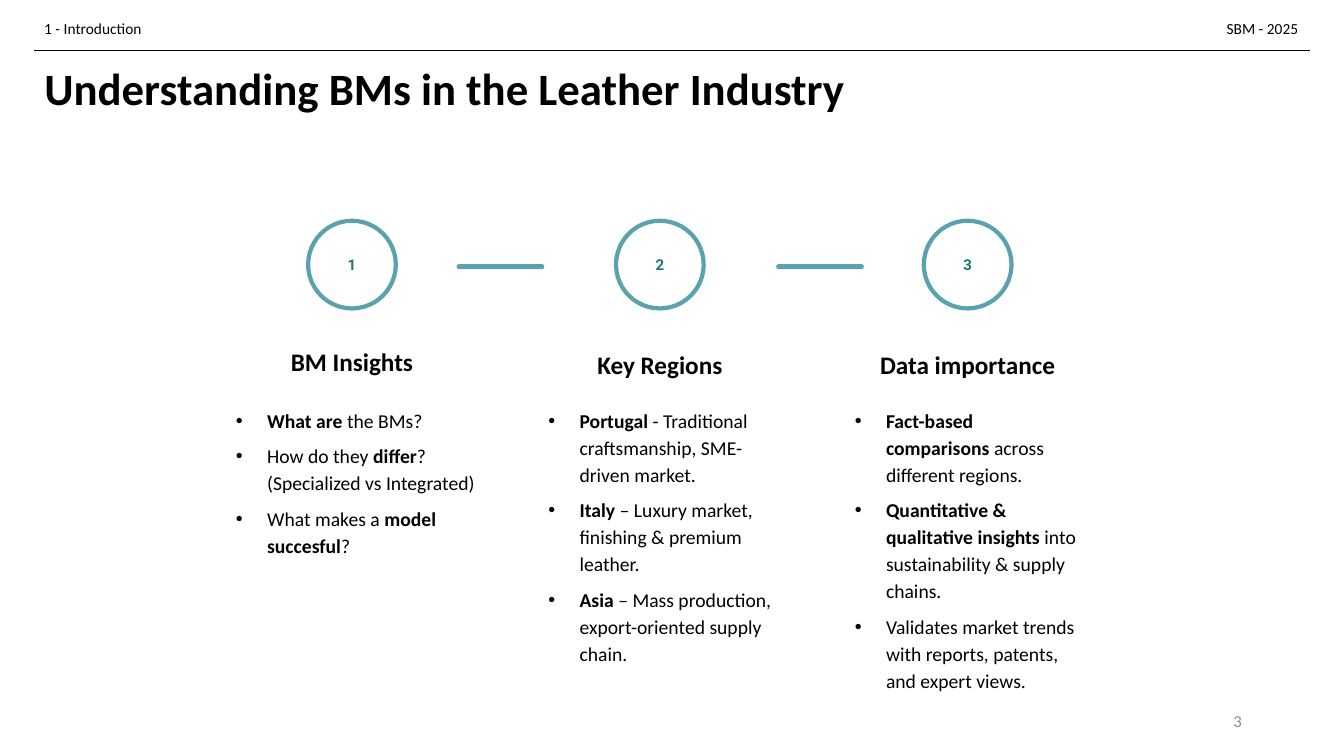
from lxml.etree import SubElement
from pptx import Presentation
from pptx.dml.color import RGBColor
from pptx.enum.shapes import MSO_CONNECTOR as Connector, MSO_SHAPE as Shape
from pptx.enum.text import MSO_ANCHOR as Anchor, MSO_AUTO_SIZE as AutoSize, PP_ALIGN as Align
from pptx.oxml.ns import qn
from pptx.util import Inches, Pt

COLORS = {"ink": "000000", "teal": "5AA2AE", "number": "1B786F", "muted": "8C8C8C"}
WIDTH, HEIGHT = Inches(13.33), Inches(7.5)
COLUMNS, ROWS = 160, 90
MARGIN = 4.08
FIRST_CENTER, STEP_PITCH = 41.9, 36.65
CIRCLE = 10.44
FIRST_BAR, BAR_PITCH = 54.36, 38.04

STEPS = [
    ("BM Insights", 38.64, 26.52, 31.92, [
        "**What are **the BMs?",
        "How do they **differ**? (Specialized vs Integrated)",
        "What makes a **model succesful**?",
    ]),
    ("Key Regions", 39, 63.72, 29.88, [
        "**Portugal** - Traditional craftsmanship, SME-driven market.",
        "**Italy** – Luxury market, finishing & premium leather.",
        "**Asia** – Mass production, export-oriented supply chain.",
    ]),
    ("Data importance", 39, 100.2, 29.88, [
        "**Fact-based comparisons **across different regions.",
        "**Quantitative & qualitative insights **into sustainability & supply chains.",
        "Validates market trends with reports, patents, and expert views.",
    ]),
]


def color(name):
    return RGBColor.from_string(COLORS[name])


def across(columns):
    return round(WIDTH * columns / COLUMNS)


def down(rows):
    return round(HEIGHT * rows / ROWS)


def area(left, top, width, height):
    return across(left), down(top), across(width), down(height)


def move(box, left, top, width, height):
    box.left, box.top, box.width, box.height = area(left, top, width, height)


def add_bullet(para):
    properties = para._p.get_or_add_pPr()
    properties.set("marL", str(Inches(0.31)))
    properties.set("indent", str(-Inches(0.31)))
    SubElement(properties, qn("a:buFont")).set("typeface", "Arial")
    SubElement(properties, qn("a:buChar")).set("char", "•")


def write(box, lines, size=14, font="Calibri", ink="ink", bold=False, align=Align.LEFT,
          anchor=Anchor.TOP, inset=None, spacing=1, after=0, bullets=False):
    frame = box.text_frame
    frame.word_wrap = True
    frame.auto_size = AutoSize.NONE
    frame.vertical_anchor = anchor
    side, edge = (Inches(0.1), Inches(0.05)) if inset is None else (Inches(inset),) * 2
    frame.margin_left = frame.margin_right = side
    frame.margin_top = frame.margin_bottom = edge
    for index, line in enumerate(lines):
        para = frame.add_paragraph() if index else frame.paragraphs[0]
        if bullets:
            add_bullet(para)
        para.alignment = align
        para.line_spacing = spacing
        para.space_before, para.space_after = Pt(0), Pt(after)
        for part, text in enumerate(line.split("**")):
            if text:
                span = para.add_run()
                span.text = text
                span.font.name = font
                span.font.size = Pt(size)
                span.font.bold = bold or part % 2 == 1
                span.font.color.rgb = color(ink)


def add_label(page, place, text, **style):
    write(page.shapes.add_textbox(*area(*place)), [text], **style)


def add_rule(page):
    rule = page.shapes.add_connector(
        Connector.STRAIGHT, across(MARGIN), down(6), across(COLUMNS - MARGIN), down(6))
    rule.line.color.rgb = color("ink")
    rule.line.width = Pt(0.25)
    SubElement(rule._element.spPr, qn("a:effectLst"))


def add_circle(page, center):
    circle = page.shapes.add_shape(
        Shape.OVAL, *area(center - CIRCLE / 2, 26.28, CIRCLE, CIRCLE))
    circle.shadow.inherit = False
    circle.fill.background()
    circle.line.color.rgb = color("teal")
    circle.line.width = Pt(3)


def add_bar(page, left):
    bar = page.shapes.add_shape(Shape.ROUNDED_RECTANGLE, *area(left, 31.44, CIRCLE, 0.6))
    bar.adjustments[0] = 0.5
    bar.shadow.inherit = False
    bar.fill.solid()
    bar.fill.fore_color.rgb = color("teal")
    bar.line.fill.background()


def add_step(page, body, index, step):
    heading, heading_top, list_left, list_width, points = step
    center = FIRST_CENTER + index * STEP_PITCH
    add_circle(page, center)
    add_label(page, (center - 3.84, 28.6, 7.68, 5.64), str(index + 1), size=10.7,
              font="Roboto", ink="number", bold=True, align=Align.CENTER,
              inset=0.13, spacing=1.15)
    add_label(page, (center - 14.94, heading_top, 29.88, 7.8), heading, size=18, bold=True,
              align=Align.CENTER, anchor=Anchor.BOTTOM, inset=0.13, spacing=1.15)
    move(body, list_left, 46.68, list_width, 37)
    write(body, points, inset=0.13, spacing=1.15, after=6, bullets=True)


def main():
    deck = Presentation()
    deck.slide_width, deck.slide_height = WIDTH, HEIGHT
    page = deck.slides.add_slide(deck.slide_layouts.get_by_name("Comparison"))
    title, *bodies = page.placeholders
    for spare in bodies[len(STEPS):]:
        spare._element.getparent().remove(spare._element)

    move(title, MARGIN, 7.32, COLUMNS - 2 * MARGIN, 13.32)
    write(title, ["Understanding BMs in the Leather Industry"], size=32, bold=True, spacing=0.9)
    add_rule(page)
    add_label(page, (MARGIN, 1.68, 21.12, 3.48), "1 - Introduction", size=11)
    add_label(page, (144.84, 1.68, 11.16, 3.48), "SBM - 2025", size=11)
    add_label(page, (113.04, 83.4, 36, 4.8), "3", size=12, ink="muted",
              align=Align.RIGHT, anchor=Anchor.MIDDLE)
    for index, step in enumerate(STEPS):
        add_step(page, bodies[index], index, step)
    for index in range(len(STEPS) - 1):
        add_bar(page, FIRST_BAR + index * BAR_PITCH)
    deck.save("out.pptx")


if __name__ == "__main__":
    main()
